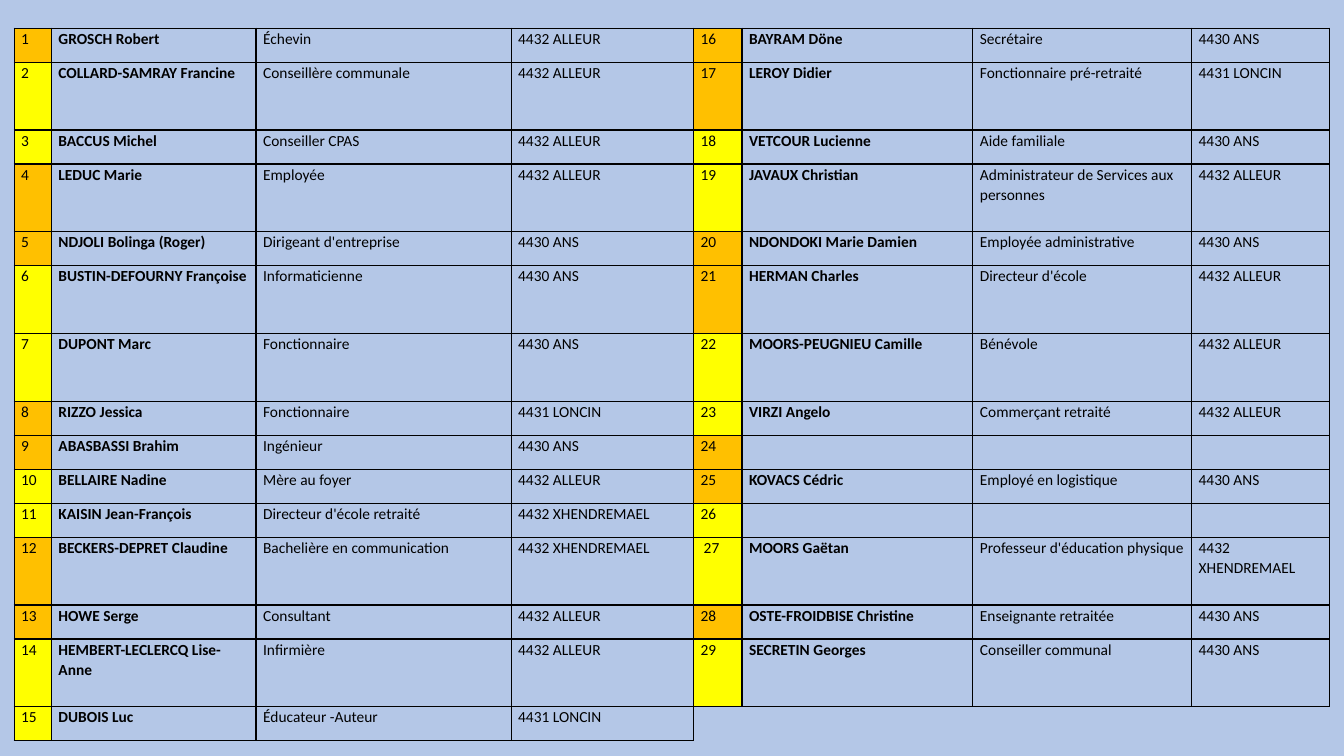
from dataclasses import dataclass

from lxml import etree
from pptx import Presentation
from pptx.dml.color import RGBColor
from pptx.oxml.ns import qn
from pptx.util import Inches, Pt

# Candidates in list order: name, occupation, town
CANDIDATES = [
    ("GROSCH Robert", "Échevin", "4432 ALLEUR"),
    ("COLLARD-SAMRAY Francine", "Conseillère communale", "4432 ALLEUR"),
    ("BACCUS Michel", "Conseiller CPAS", "4432 ALLEUR"),
    ("LEDUC Marie", "Employée", "4432 ALLEUR"),
    ("NDJOLI Bolinga (Roger)", "Dirigeant d'entreprise", "4430 ANS"),
    ("BUSTIN-DEFOURNY Françoise", "Informaticienne", "4430 ANS"),
    ("DUPONT Marc", "Fonctionnaire", "4430 ANS"),
    ("RIZZO Jessica", "Fonctionnaire", "4431 LONCIN"),
    ("ABASBASSI Brahim", "Ingénieur", "4430 ANS"),
    ("BELLAIRE Nadine", "Mère au foyer", "4432 ALLEUR"),
    ("KAISIN Jean-François", "Directeur d'école retraité", "4432 XHENDREMAEL"),
    ("BECKERS-DEPRET Claudine", "Bachelière en communication", "4432 XHENDREMAEL"),
    ("HOWE Serge", "Consultant", "4432 ALLEUR"),
    ("HEMBERT-LECLERCQ Lise-Anne", "Infirmière", "4432 ALLEUR"),
    ("DUBOIS Luc", "Éducateur -Auteur", "4431 LONCIN"),
    ("BAYRAM Döne", "Secrétaire", "4430 ANS"),
    ("LEROY Didier", "Fonctionnaire pré-retraité", "4431 LONCIN"),
    ("VETCOUR Lucienne", "Aide familiale", "4430 ANS"),
    ("JAVAUX Christian", "Administrateur de Services aux personnes", "4432 ALLEUR"),
    ("NDONDOKI Marie Damien", "Employée administrative", "4430 ANS"),
    ("HERMAN Charles", "Directeur d'école", "4432 ALLEUR"),
    ("MOORS-PEUGNIEU Camille", "Bénévole", "4432 ALLEUR"),
    ("VIRZI Angelo", "Commerçant retraité", "4432 ALLEUR"),
    ("", "", ""),
    ("KOVACS Cédric", "Employé en logistique", "4430 ANS"),
    ("", "", ""),
    ("MOORS Gaëtan", "Professeur d'éducation physique", "4432 XHENDREMAEL"),
    ("OSTE-FROIDBISE Christine", "Enseignante retraitée", "4430 ANS"),
    ("SECRETIN Georges", "Conseiller communal", "4430 ANS"),
]
ORANGE_NUMBERS = {1, 4, 5, 8, 9, 12, 13, 16, 17, 20, 21, 24, 25, 28}
INDENTED_NUMBER = 27

ROWS = 15
TALL_ROWS = {2, 4, 6, 7, 12, 14}
COLUMN_WIDTHS = [0.37, 2.03, 2.53, 1.81, 0.48, 2.29, 2.17, 1.37]
FIELDS = 4
LEFT, TOP, WIDTH, HEIGHT = 0.14, 0.28, 13.06, 7.07


@dataclass(frozen=True)
class Theme:
    background: str = "B4C7E7"
    orange: str = "FFC000"
    yellow: str = "FFFF00"
    ink: str = "000000"
    font: str = "Calibri"
    size: int = 11
    line_spacing: float = 1.07
    border: int = 1
    inset: float = 0.07
    wide_inset: float = 0.1


THEME = Theme()


def set_borders(cell, drawn="LRTB"):
    """Rule the sides named in drawn and clear the others."""
    properties = cell._tc.get_or_add_tcPr()
    for side in "LRTB":
        line = etree.SubElement(properties, qn(f"a:ln{side}"), w=str(Pt(THEME.border)))
        if side in drawn:
            fill = etree.SubElement(line, qn("a:solidFill"))
            etree.SubElement(fill, qn("a:srgbClr"), val=THEME.ink)
        else:
            etree.SubElement(line, qn("a:noFill"))


def format_cell(cell, wording="", bold=False, fill=None, inset=THEME.inset, borders="LRTB"):
    set_borders(cell, borders)
    if fill:
        cell.fill.solid()
        cell.fill.fore_color.rgb = RGBColor.from_string(fill)
    else:
        cell.fill.background()
    cell.margin_left, cell.margin_right = Inches(inset), Inches(THEME.inset)
    cell.margin_top = cell.margin_bottom = 0
    paragraph = cell.text_frame.paragraphs[0]
    paragraph.text = wording
    paragraph.line_spacing = THEME.line_spacing
    paragraph.font.size = Pt(THEME.size)
    for run in paragraph.runs:
        run.font.name = THEME.font
        run.font.size = Pt(THEME.size)
        run.font.bold = bold
        run.font.color.rgb = RGBColor.from_string(THEME.ink)


def add_candidate(table, number, candidate):
    half, row = divmod(number - 1, ROWS)
    first = half * FIELDS
    format_cell(
        table.cell(row, first),
        str(number),
        fill=THEME.orange if number in ORANGE_NUMBERS else THEME.yellow,
        inset=THEME.wide_inset if number == INDENTED_NUMBER else THEME.inset,
    )
    for offset, wording in enumerate(candidate, start=1):
        format_cell(table.cell(row, first + offset), wording, bold=offset == 1)


def add_candidate_table(slide):
    frame = slide.shapes.add_table(
        ROWS, len(COLUMN_WIDTHS), Inches(LEFT), Inches(TOP), Inches(WIDTH), Inches(HEIGHT)
    )
    table = frame.table
    table.first_row = table.horz_banding = False
    for column, width in zip(table.columns, COLUMN_WIDTHS):
        column.width = Inches(width)
    # A tall row is twice a short one
    short_height = HEIGHT / (ROWS + len(TALL_ROWS))
    for position, row in enumerate(table.rows, start=1):
        row.height = Inches(short_height * (2 if position in TALL_ROWS else 1))

    for number, candidate in enumerate(CANDIDATES, start=1):
        add_candidate(table, number, candidate)

    for column in range(FIELDS, 2 * FIELDS):
        format_cell(table.cell(ROWS - 1, column), borders="LT" if column == FIELDS else "T")
    table.cell(ROWS - 1, FIELDS).merge(table.cell(ROWS - 1, 2 * FIELDS - 1))


def main():
    deck = Presentation()
    deck.slide_width, deck.slide_height = Inches(13.33), Inches(7.5)
    slide = deck.slides.add_slide(deck.slide_layouts[6])
    slide.background.fill.solid()
    slide.background.fill.fore_color.rgb = RGBColor.from_string(THEME.background)
    add_candidate_table(slide)
    deck.save("out.pptx")


if __name__ == "__main__":
    main()
